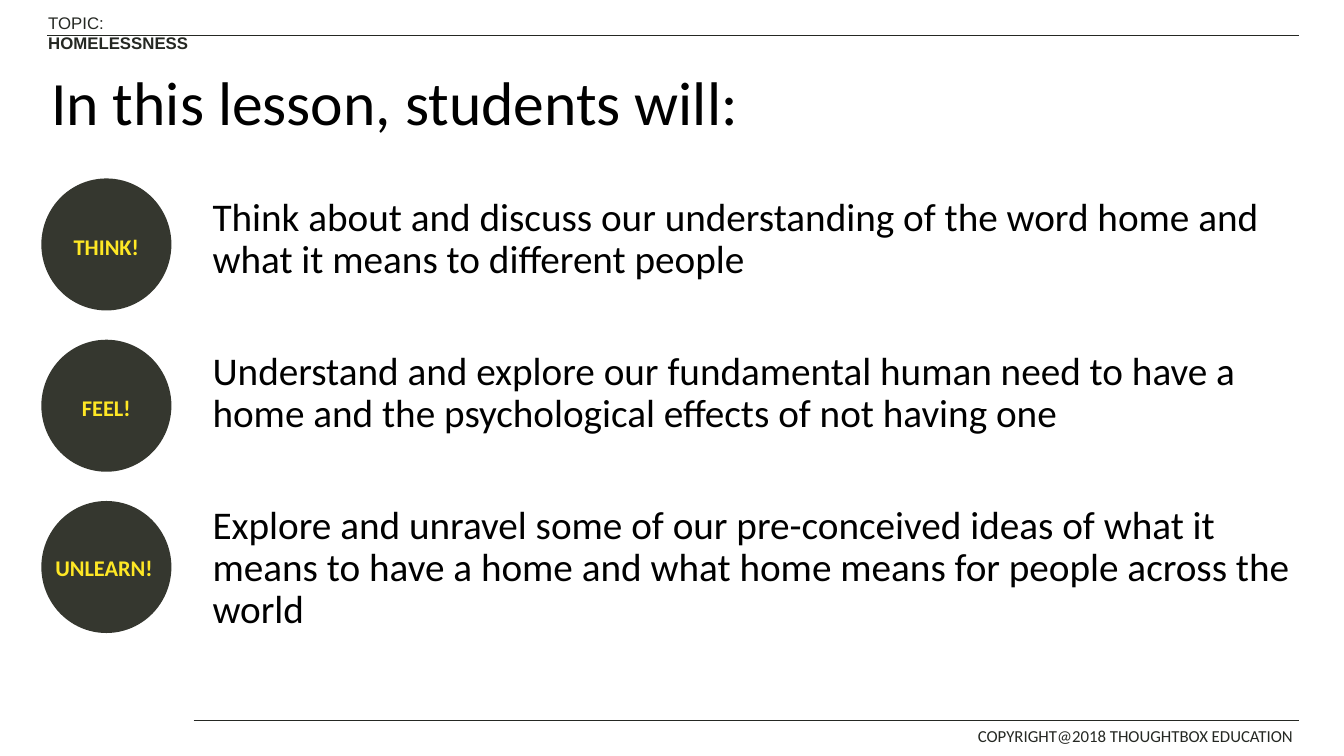
from pptx import Presentation
from pptx.dml.color import RGBColor
from pptx.enum.shapes import MSO_CONNECTOR as CONN, MSO_SHAPE as SHAPE
from pptx.enum.text import MSO_ANCHOR as ANCHOR, PP_ALIGN as ALIGN
from pptx.oxml.ns import qn
from pptx.util import Inches, Pt
from lxml import etree

INK = RGBColor(0x25, 0x28, 0x23)
BLACK = RGBColor(0, 0, 0)
CHARCOAL = RGBColor(0x35, 0x37, 0x2F)
YELLOW = RGBColor(0xFE, 0xE7, 0x25)

GOALS = [
    "Think about and discuss our understanding of the word home and "
    "what it means to different people",
    "Understand and explore our fundamental human need to have a home "
    "and the psychological effects of not having one",
    "Explore and unravel some of our pre-conceived ideas of what it "
    "means to have a home and what home means for people across the world",
]


def write(p, text, size=12, color=INK, font="Calibri", bold=False,
          align=ALIGN.LEFT, spacing=None, before=None, after=None):
    """Add one formatted run and set the paragraph's layout."""
    p.alignment = align
    if spacing:
        p.line_spacing = spacing
    if before is not None:
        p.space_before = Pt(before)
    if after is not None:
        p.space_after = Pt(after)
    r = p.add_run()
    r.text = text
    r.font.size, r.font.name, r.font.bold = Pt(size), font, bold
    r.font.color.rgb = color


def text_box(s, x, y, w, h, anchor=ANCHOR.TOP):
    tf = s.shapes.add_textbox(Inches(x), Inches(y), Inches(w), Inches(h)).text_frame
    tf.word_wrap = True
    tf.vertical_anchor = anchor
    return tf


def rule(s, x1, x2, y):
    line = s.shapes.add_connector(CONN.STRAIGHT, Inches(x1), Inches(y),
                                  Inches(x2), Inches(y))
    line.line.color.rgb = INK
    line.line.width = Pt(1)
    etree.SubElement(line._element.spPr, qn("a:effectLst"))


def header(s, x, y, w):
    p = text_box(s, x, y, 1.88, 0.3).paragraphs[0]
    write(p, "TOPIC: ", font="Arial")
    write(p, "HOMELESSNESS", font="Arial", bold=True)
    rule(s, x + 0.09, x + w, y + 0.27)


def footer(s, x, y, w):
    tf = text_box(s, x + w - 3.28, y, 3.4, 0.31)
    write(tf.paragraphs[0], "COPYRIGHT@2018 THOUGHTBOX EDUCATION")
    rule(s, x, x + w, y)


def title(s, x, y, w, h):
    tf = text_box(s, x, y, w, h, ANCHOR.MIDDLE)
    write(tf.paragraphs[0], "In this lesson, students will:", size=44,
          color=BLACK, spacing=0.9)


def goals(s, x, y, w, h):
    tf = text_box(s, x, y, w, h)
    for i, goal in enumerate(GOALS):
        p = tf.paragraphs[0] if i == 0 else tf.add_paragraph()
        write(p, goal, size=28, color=BLACK, spacing=0.9, before=49.5 if i else 0)


def badges(s, x, y, w, h, pitch):
    label = dict(size=16, color=YELLOW, bold=True)
    for i, word in enumerate(["THINK!", "FEEL!", "UNLEARN!"]):
        top = y + i * pitch
        sp = s.shapes.add_shape(SHAPE.OVAL, Inches(x), Inches(top), Inches(w), Inches(h))
        sp.shadow.inherit = False
        sp.fill.solid()
        sp.fill.fore_color.rgb = CHARCOAL
        sp.line.fill.background()
        if len(word) > 6:  # too wide for the circle's own text area
            tf = text_box(s, x + 0.04, top + 0.48, 1.2, 0.37)
            write(tf.paragraphs[0], word, **label)
        else:
            sp.text_frame.vertical_anchor = ANCHOR.MIDDLE
            write(sp.text_frame.paragraphs[0], word, align=ALIGN.CENTER,
                  spacing=1.15, after=10, **label)


def main():
    prs = Presentation()
    prs.slide_width, prs.slide_height = Inches(13.33), Inches(7.5)
    s = prs.slides.add_slide(prs.slide_layouts[6])
    # Frame
    header(s, 0.38, 0.08, 12.5)
    footer(s, 1.92, 7.15, 10.96)
    # Lesson goals
    title(s, 0.41, 0.32, 11.5, 1.45)
    goals(s, 2.01, 1.91, 10.91, 4.76)
    badges(s, 0.41, 1.77, 1.29, 1.31, pitch=1.6)
    prs.save("out.pptx")


if __name__ == "__main__":
    main()
